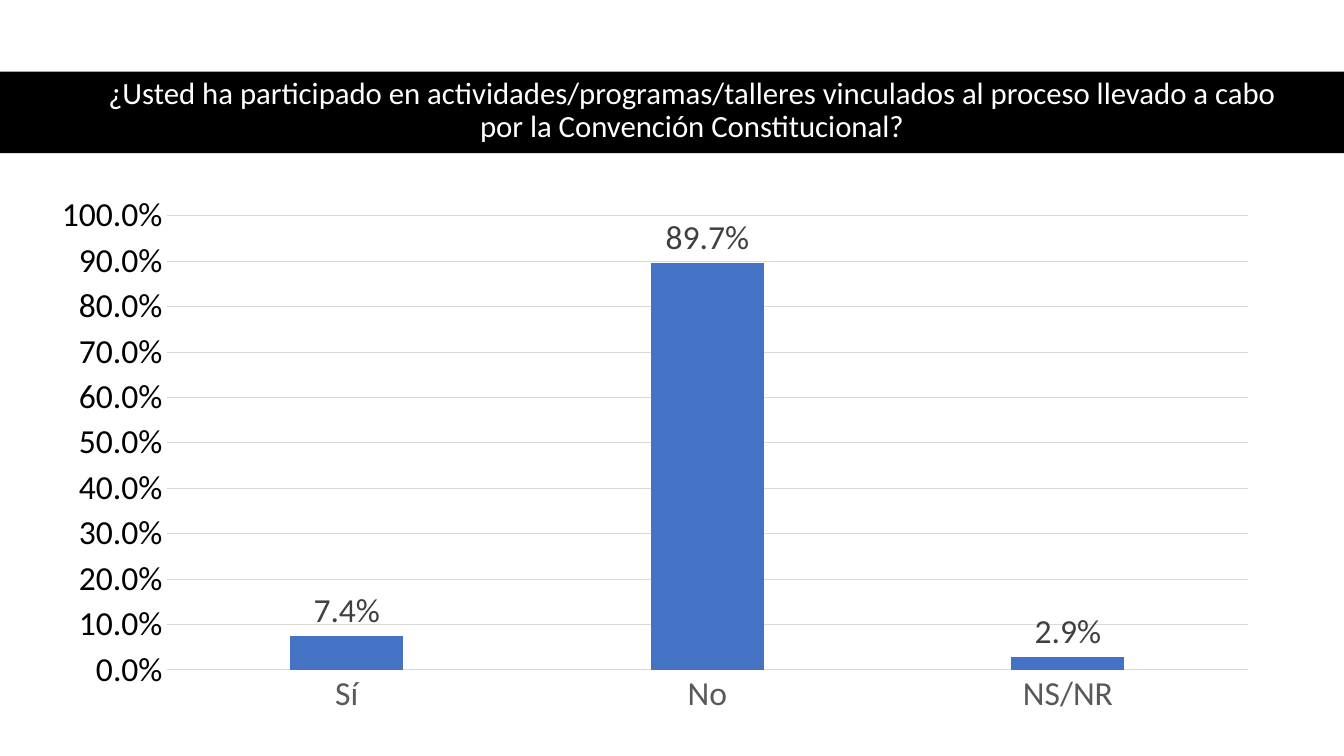
from typing import NamedTuple

from pptx import Presentation
from pptx.chart.data import CategoryChartData
from pptx.dml.color import RGBColor
from pptx.dml.fill import FillFormat
from pptx.enum.chart import XL_CHART_TYPE, XL_LABEL_POSITION, XL_TICK_MARK
from pptx.enum.shapes import MSO_SHAPE
from pptx.enum.text import MSO_ANCHOR, MSO_AUTO_SIZE, PP_ALIGN
from pptx.slide import Slide
from pptx.text.text import Font
from pptx.util import Pt

FONT_NAME = "Calibri"
PERCENT = "0.0%"
GRID_GREY = "D9D9D9"
QUESTION = (
    "¿Usted ha participado en actividades/programas/talleres vinculados "
    "al proceso llevado a cabo por la Convención Constitucional?"
)


class Answer(NamedTuple):
    label: str
    share: float


ANSWERS = [Answer("Sí", 0.074), Answer("No", 0.897), Answer("NS/NR", 0.029)]


def paint(fill: FillFormat, color: str) -> None:
    fill.solid()
    fill.fore_color.rgb = RGBColor.from_string(color)


def style_font(font: Font, size: float, color: str) -> None:
    font.name = FONT_NAME
    font.size = Pt(size)
    font.bold = False
    paint(font.fill, color)


def add_question(slide: Slide, slide_width: int) -> None:
    title = slide.shapes.title
    title.left, title.top, title.width, title.height = Pt(43.9), Pt(50.4), Pt(882.7), Pt(58.3)

    # Black band, placed behind the question
    band = slide.shapes.add_shape(MSO_SHAPE.RECTANGLE, 0, Pt(51.1), slide_width, Pt(58.3))
    band.shadow.inherit = False
    paint(band.fill, "000000")
    band.line.fill.background()
    title.element.addprevious(band.element)

    # Question text
    frame = title.text_frame
    frame.text = QUESTION
    frame.word_wrap = True
    frame.auto_size = MSO_AUTO_SIZE.NONE
    frame.vertical_anchor = MSO_ANCHOR.MIDDLE
    paragraph = frame.paragraphs[0]
    paragraph.alignment = PP_ALIGN.CENTER
    paragraph.line_spacing = 0.9
    paragraph.space_after = Pt(8)
    properties = paragraph._p.get_or_add_pPr()
    properties.set("marL", str(Pt(18)))
    properties.set("indent", "0")
    style_font(paragraph.font, 22, "FFFFFF")


def add_answers_chart(slide: Slide) -> None:
    data = CategoryChartData(number_format=PERCENT)
    data.categories = [answer.label for answer in ANSWERS]
    data.add_series("Series 1", [answer.share for answer in ANSWERS])
    chart = slide.shapes.add_chart(
        XL_CHART_TYPE.COLUMN_CLUSTERED, Pt(26.6), Pt(131.8), Pt(882.7), Pt(386.6), data
    ).chart
    chart.has_legend = False
    chart.has_title = False
    style_font(chart.font, 24, "000000")

    # Columns and their labels
    plot = chart.plots[0]
    plot.gap_width = 219
    plot.overlap = -27
    plot.vary_by_categories = False
    paint(plot.series[0].format.fill, "4472C4")
    plot.has_data_labels = True
    labels = plot.data_labels
    labels.show_value = True
    labels.position = XL_LABEL_POSITION.OUTSIDE_END
    labels.number_format = PERCENT
    labels.number_format_is_linked = False
    style_font(labels.font, 24, "404040")

    # Axes and gridlines
    answer_axis, share_axis = chart.category_axis, chart.value_axis
    for axis, color in ((answer_axis, "595959"), (share_axis, "000000")):
        axis.major_tick_mark = axis.minor_tick_mark = XL_TICK_MARK.NONE
        style_font(axis.tick_labels.font, 24, color)
    share_axis.minimum_scale = 0
    share_axis.maximum_scale = 1
    share_axis.major_unit = 0.1
    share_axis.tick_labels.number_format = PERCENT
    share_axis.tick_labels.number_format_is_linked = False
    share_axis.format.line.fill.background()
    for line in (answer_axis.format.line, share_axis.major_gridlines.format.line):
        line.width = Pt(0.75)
        paint(line.fill, GRID_GREY)


def main() -> None:
    presentation = Presentation()
    presentation.slide_width, presentation.slide_height = Pt(960), Pt(540)
    slide = presentation.slides.add_slide(presentation.slide_layouts.get_by_name("Title Only"))
    add_question(slide, presentation.slide_width)
    add_answers_chart(slide)
    presentation.save("out.pptx")


if __name__ == "__main__":
    main()
